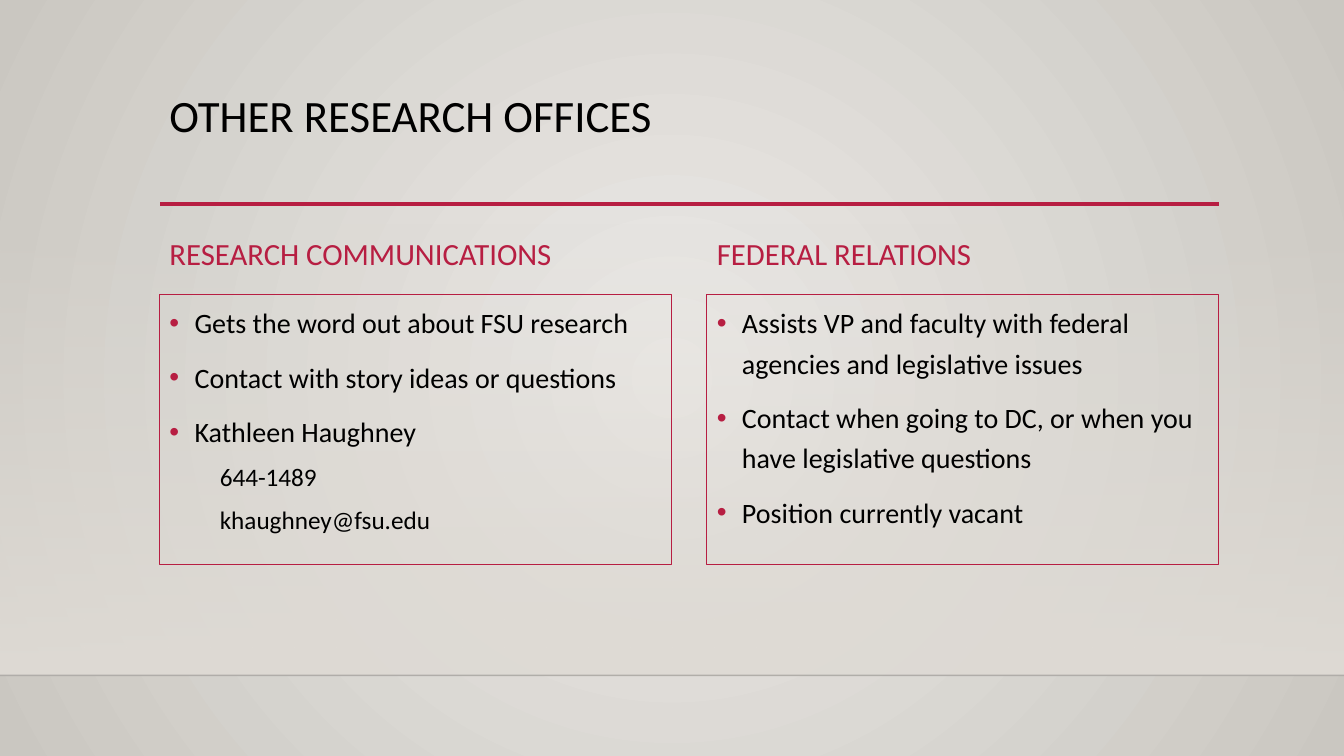
from lxml import etree
from pptx import Presentation
from pptx.dml.color import RGBColor as RGB
from pptx.enum.shapes import MSO_CONNECTOR as CONN, MSO_SHAPE as SHAPE
from pptx.enum.text import MSO_ANCHOR as ANCHOR
from pptx.oxml import parse_xml
from pptx.oxml.ns import nsdecls, qn
from pptx.util import Pt

TITLE = "OTHER RESEARCH OFFICES"
# heading, then (level, text) lines
OFFICES = [
    ("RESEARCH COMMUNICATIONS", [
        (0, "Gets the word out about FSU research"),
        (0, "Contact with story ideas or questions"),
        (0, "Kathleen Haughney"),
        (1, "644-1489"),
        (1, "khaughney@fsu.edu"),
    ]),
    ("FEDERAL RELATIONS", [
        (0, "Assists VP and faculty with federal agencies and legislative issues"),
        (0, "Contact when going to DC, or when you have legislative questions"),
        (0, "Position currently vacant"),
    ]),
]
THEME = {
    "font": "Calibri", "title": 32, "heading": 22, "levels": (20, 18),
    "text": "000000", "accent": "B71E42", "floor": "000001",
    "glow": [(0, "ECEAE7", 100), (100, "CAC7C1", 100)],
    "fade": [(0, "DFDBD5", 0), (100, "DFDBD5", 100)],
}
WIDTH, HEIGHT = 960, 540
LEFT, COL_W, GAP = 113.9, 365.8, 25.2
HEAD_TOP, HEAD_H, LIST_TOP, LIST_H = 159.1, 38.6, 210.2, 193
RULE_Y, FLOOR_Y = 145.6, 482.4
INDENT = 18
SPACE_BEFORE = (10, 5)
RADIAL = ('<a:path path="circle"><a:fillToRect l="50000" t="50000" '
          'r="50000" b="50000"/></a:path>')
DOWNWARD = '<a:lin ang="5400000" scaled="0"/>'


def set_gradient(fill, holder, stops, direction):
    """Fill with (percent, colour, opacity) stops; holder is the fill's parent element."""
    fill.solid()
    marks = "".join(
        f'<a:gs pos="{pos * 1000}"><a:srgbClr val="{color}">'
        f'<a:alpha val="{alpha * 1000}"/></a:srgbClr></a:gs>'
        for pos, color, alpha in stops)
    grad = parse_xml(f'<a:gradFill {nsdecls("a")} rotWithShape="1">'
                     f'<a:gsLst>{marks}</a:gsLst>{direction}</a:gradFill>')
    holder.replace(holder.find(qn("a:solidFill")), grad)


def add_rule(s, x1, x2, y, color, width, opacity=100):
    line = s.shapes.add_connector(CONN.STRAIGHT, Pt(x1), Pt(y), Pt(x2), Pt(y))
    line.line.color.rgb = RGB.from_string(color)
    line.line.width = Pt(width)
    sp_pr = line._element.spPr
    etree.SubElement(sp_pr, qn("a:effectLst"))
    if opacity < 100:
        clr = sp_pr.find(".//" + qn("a:srgbClr"))
        etree.SubElement(clr, qn("a:alpha"), val=str(opacity * 1000))


def add_box(s, x, y, w, h, anchor=ANCHOR.TOP):
    sp = s.shapes.add_textbox(Pt(x), Pt(y), Pt(w), Pt(h))
    sp.text_frame.word_wrap = True
    sp.text_frame.vertical_anchor = anchor
    return sp


def write(p, text, size, color, **spacing):
    for name, value in spacing.items():
        setattr(p, name, value)
    r = p.add_run()
    r.text = text
    style = {"name": THEME["font"], "size": Pt(size), "bold": False}
    for name, value in style.items():
        setattr(r.font, name, value)
    r.font.color.rgb = RGB.from_string(color)


def set_list_level(p, level):
    """Bulleted hanging indent at level 0, plain indented text at level 1."""
    p.level = level
    p_pr = p._p.get_or_add_pPr()
    p_pr.set("marL", str(Pt(INDENT * (level + 1))))
    p_pr.set("indent", str(0 if level else -Pt(INDENT)))
    if level:
        etree.SubElement(p_pr, qn("a:buNone"))
        return
    clr = etree.SubElement(p_pr, qn("a:buClr"))
    etree.SubElement(clr, qn("a:srgbClr"), val=THEME["accent"])
    etree.SubElement(p_pr, qn("a:buFont"), typeface="Arial")
    etree.SubElement(p_pr, qn("a:buChar"), char="•")


def add_office(s, x, heading, lines):
    sp = add_box(s, x, HEAD_TOP, COL_W, HEAD_H, ANCHOR.BOTTOM)
    write(sp.text_frame.paragraphs[0], heading, THEME["heading"], THEME["accent"])

    sp = add_box(s, x, LIST_TOP, COL_W, LIST_H)
    sp.line.color.rgb = RGB.from_string(THEME["accent"])
    sp.line.width = Pt(0.75)
    tf = sp.text_frame
    for i, (level, text) in enumerate(lines):
        p = tf.add_paragraph() if i else tf.paragraphs[0]
        set_list_level(p, level)
        write(p, text, THEME["levels"][level], THEME["text"], line_spacing=1.2,
              space_before=Pt(SPACE_BEFORE[level] if i else 0))


def main():
    prs = Presentation()
    prs.slide_width, prs.slide_height = Pt(WIDTH), Pt(HEIGHT)
    s = prs.slides.add_slide(prs.slide_layouts[6])
    bg = s.background.fill
    bg.solid()
    set_gradient(bg, s.element.find(".//" + qn("p:bgPr")), THEME["glow"], RADIAL)

    wall = s.shapes.add_shape(SHAPE.RECTANGLE, 0, Pt(HEAD_TOP), Pt(WIDTH),
                              Pt(FLOOR_Y - HEAD_TOP))
    wall.shadow.inherit = False
    set_gradient(wall.fill, wall._element.spPr, THEME["fade"], DOWNWARD)
    wall.line.fill.background()

    full_w = 2 * COL_W + GAP
    add_rule(s, 0, WIDTH, FLOOR_Y, THEME["floor"], 1, opacity=20)
    add_rule(s, LEFT + 0.5, LEFT + full_w, RULE_Y, THEME["accent"], 2.5)

    title = add_box(s, LEFT, 63.4, full_w, 83.5)
    write(title.text_frame.paragraphs[0], TITLE, THEME["title"], THEME["text"],
          line_spacing=0.9)
    for i, (heading, lines) in enumerate(OFFICES):
        add_office(s, LEFT + i * (COL_W + GAP), heading, lines)
    prs.save("out.pptx")


if __name__ == "__main__":
    main()
